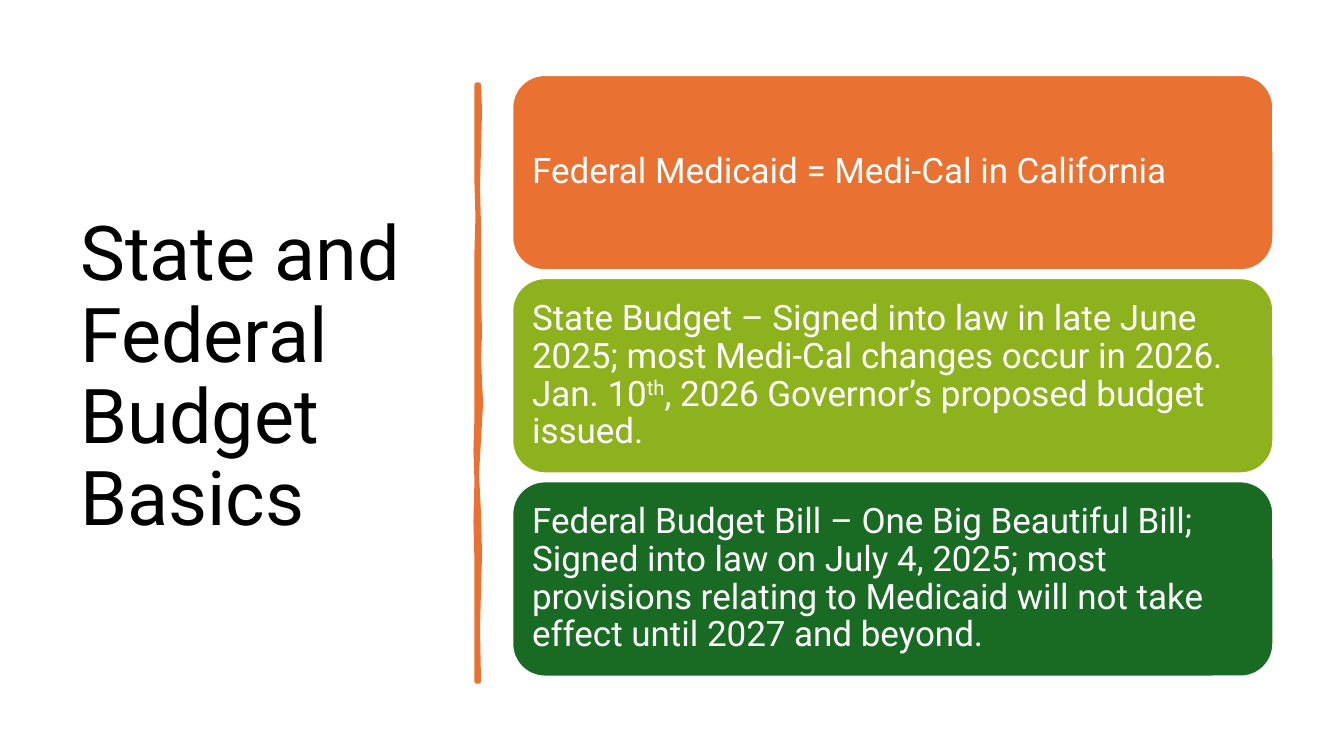
from pptx import Presentation
from pptx.dml.color import RGBColor
from pptx.enum.shapes import MSO_SHAPE
from pptx.enum.text import MSO_ANCHOR, MSO_AUTO_SIZE, PP_ALIGN
from pptx.util import Cm, Pt

ROUND = MSO_SHAPE.ROUNDED_RECTANGLE
MIDDLE = MSO_ANCHOR.MIDDLE
LEFT = PP_ALIGN.LEFT
NO_FIT = MSO_AUTO_SIZE.NONE

FONT = "Roboto"
COLORS = {"black": "000000", "white": "FFFFFF", "orange": "E97132",
          "lime": "8EB21E", "green": "196B24"}

# Each card: fill colour and runs of (text, raised)
CARDS = [
    ("orange", [("Federal Medicaid = Medi-Cal in California", False)]),
    ("lime", [("State Budget – Signed into law in late June 2025; most Medi-Cal "
               "changes occur in 2026. Jan. 10", False),
              ("th", True),
              (", 2026 Governor’s proposed budget issued.", False)]),
    ("green", [("Federal Budget Bill – One Big Beautiful Bill; Signed into law on "
                "July 4, 2025; most provisions relating to Medicaid will not take "
                "effect until 2027 and beyond.", False)]),
]

# Hand-drawn rule, in hundredths of an inch: corners of its wavy outline
OUTLINE = [
    # Right edge, downwards
    (475, 84), (476, 110), (475, 146), (474, 185), (475, 226), (475, 294),
    (476, 330), (475, 356), (477, 400), (475, 436), (473, 470), (475, 510),
    (476, 550), (475, 584), (474, 625), (475, 676),
    # Left edge, upwards
    (473, 676), (473, 645), (473, 613), (473, 557), (472, 517), (473, 477),
    (472, 446), (473, 415), (473, 335), (473, 250), (474, 215), (473, 181),
    (473, 130), (473, 84),
]
UNIT = Cm(0.0254)


def color(name):
    return RGBColor.from_string(COLORS[name])


def write(frame, runs, size, tint):
    frame.word_wrap = True
    frame.auto_size = NO_FIT
    frame.vertical_anchor = MIDDLE
    para = frame.paragraphs[0]
    para.alignment = LEFT
    para.line_spacing = 0.9
    for text, raised in runs:
        run = para.add_run()
        run.text = text
        run.font.name = FONT
        run.font.size = Pt(size)
        run.font.color.rgb = color(tint)
        if raised:
            run.font._element.set("baseline", "30000")


def paint(shape, fill, line, width):
    shape.shadow.inherit = False
    shape.fill.solid()
    shape.fill.fore_color.rgb = color(fill)
    shape.line.color.rgb = color(line)
    shape.line.width = Pt(width)


def add_title(slide, text):
    title = slide.shapes.title
    title.left, title.top = Cm(1.77), Cm(1.78)
    title.width, title.height = Cm(9.5), Cm(15.52)
    write(title.text_frame, [(text, False)], 54, "black")


def add_rule(slide):
    pen = slide.shapes.build_freeform(*OUTLINE[0], scale=UNIT)
    pen.add_line_segments(OUTLINE[1:], close=True)
    paint(pen.convert_to_shape(), "orange", "orange", 3.25)


def add_card(slide, top, fill, runs):
    card = slide.shapes.add_shape(ROUND, Cm(12.91), top, Cm(19.18), Cm(4.92))
    paint(card, fill, "white", 1.5)
    frame = card.text_frame
    frame.margin_left = frame.margin_right = Cm(0.26)
    frame.margin_top = frame.margin_bottom = Cm(0.25)
    write(frame, runs, 25, "white")


def main():
    deck = Presentation()
    deck.slide_width, deck.slide_height = Cm(33.87), Cm(19.05)
    slide = deck.slides.add_slide(deck.slide_layouts[5])

    # Left side
    add_title(slide, "State and Federal Budget Basics")
    add_rule(slide)

    # Stack of cards
    for row, (fill, runs) in enumerate(CARDS):
        add_card(slide, Cm(1.89 + 5.12 * row), fill, runs)

    deck.save("out.pptx")


if __name__ == "__main__":
    main()
